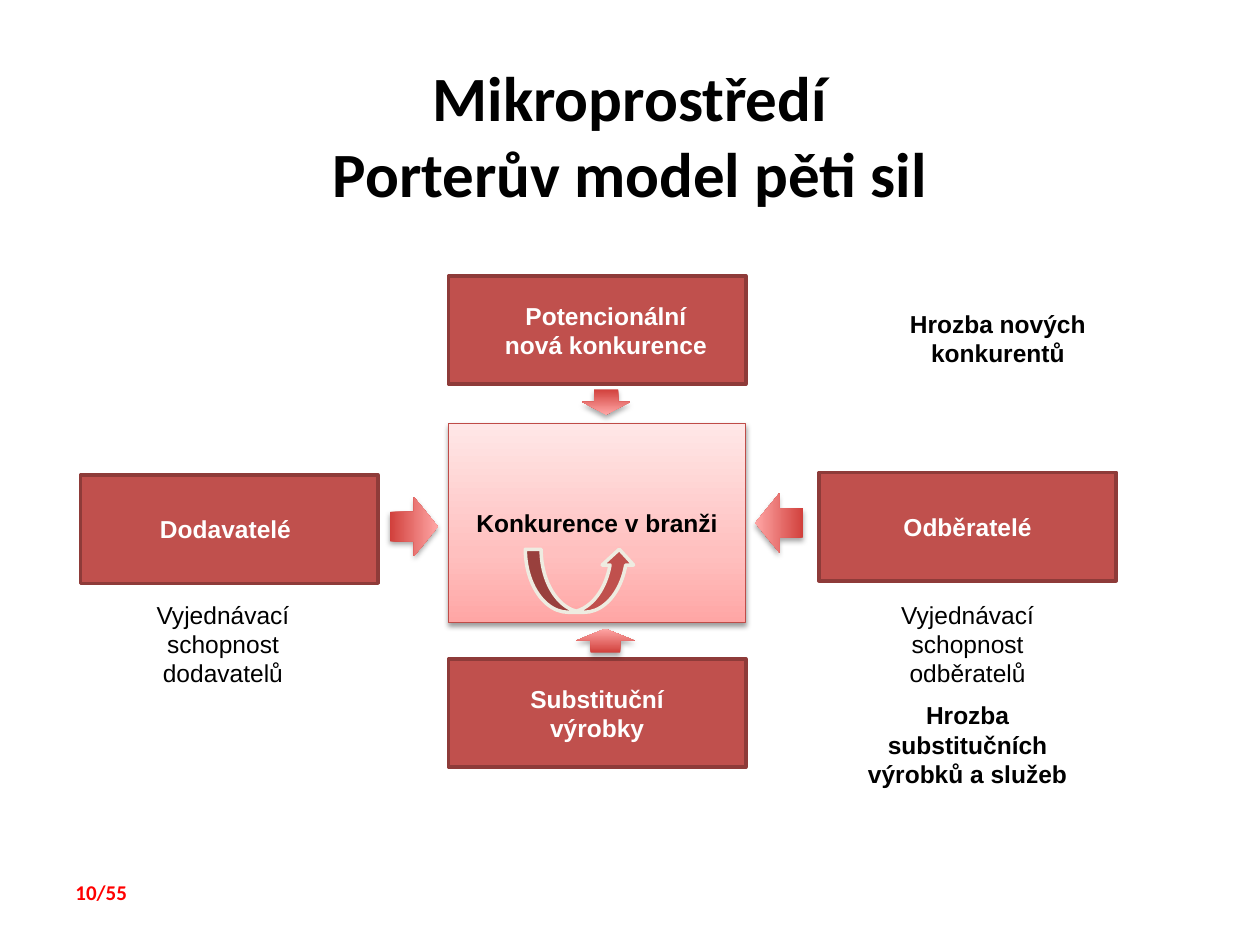
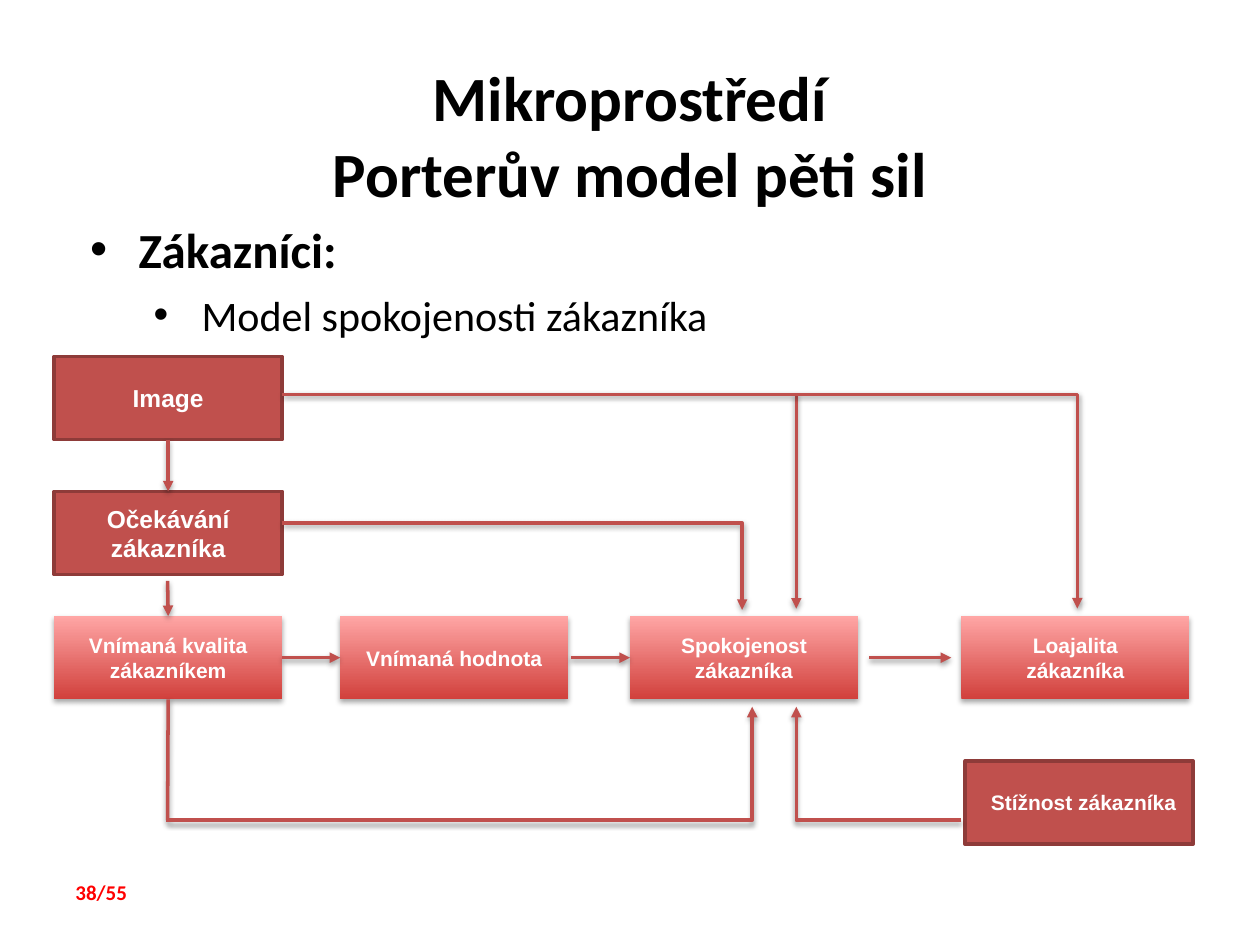
from copy import deepcopy

from pptx import Presentation
from pptx.dml.color import RGBColor
from pptx.enum.shapes import MSO_CONNECTOR, MSO_SHAPE
from pptx.enum.text import MSO_ANCHOR, MSO_AUTO_SIZE, PP_ALIGN
from pptx.oxml import parse_xml
from pptx.oxml.ns import nsdecls, qn
from pptx.util import Inches, Pt

CELL = Inches(0.1)
COLUMNS, ROWS = 100, 75
TITLE_AND_CONTENT, TITLE_ONLY = 1, 5
RECTANGLE, UP_ARROW = MSO_SHAPE.RECTANGLE, MSO_SHAPE.UP_ARROW
CURVED_ARROW = MSO_SHAPE.CURVED_UP_ARROW
STRAIGHT, ELBOW = MSO_CONNECTOR.STRAIGHT, MSO_CONNECTOR.ELBOW
LEFT, CENTER = PP_ALIGN.LEFT, PP_ALIGN.CENTER
TOP, MIDDLE = MSO_ANCHOR.TOP, MSO_ANCHOR.MIDDLE
SIDE_TOP, SIDE_LEFT, SIDE_BOTTOM, SIDE_RIGHT = range(4)

BLACK, WHITE, RED = "000000", "FFFFFF", "FF0000"
BRICK, BRICK_EDGE, CREAM = "C0504D", "8E3B39", "EEECE1"
PINK_EDGE = "BF4C48"
STRONG_GRADIENT = [(0, "D1403C"), (100, "FFA6A5")]
PALE_GRADIENT = [(0, "FFA6A5"), (35, "FFC0BF"), (100, "FFE7E7")]
TITLE = "Mikroprostředí\vPorterův model pěti sil"


def color(value):
    """Turn a hex string into a colour."""
    return RGBColor.from_string(value)


def place(*lengths):
    """Turn grid lengths into slide lengths."""
    return [round(length * CELL) for length in lengths]


def write(shape, text, size=14, font="Arial", fill=BLACK, bold=True,
          align=CENTER, anchor=TOP, insets=(1, 1)):
    """Write text into a shape, one paragraph for each line."""
    frame = shape.text_frame
    frame.text = text
    frame.word_wrap = True
    frame.auto_size = MSO_AUTO_SIZE.NONE
    frame.vertical_anchor = anchor
    frame.margin_left, frame.margin_right = place(*insets)
    frame.margin_top = frame.margin_bottom = Inches(0.05)
    for paragraph in frame.paragraphs:
        paragraph.alignment = align
        for run in paragraph.runs:
            run.font.size, run.font.name, run.font.bold = Pt(size), font, bold
            run.font.color.rgb = color(fill)
        for line_break in paragraph._p.findall(qn("a:br")):
            line_break.append(deepcopy(paragraph.runs[0]._r.rPr))


def add_text(slide, box, text, **text_format):
    """Add a text box on the grid."""
    write(slide.shapes.add_textbox(*place(*box)), text, **text_format)


def cast_shadow(properties, opacity, distance):
    """Give shape properties a soft shadow that falls downwards."""
    properties.append(parse_xml(
        f'<a:effectLst {nsdecls("a")}><a:outerShdw blurRad="{Pt(3.1)}" '
        f'dist="{Pt(distance)}" dir="5400000" rotWithShape="0">'
        f'<a:srgbClr val="{BLACK}"><a:alpha val="{opacity * 1000}"/></a:srgbClr>'
        '</a:outerShdw></a:effectLst>'))


def fill_gradient(shape, stops):
    """Fill a shape with colour stops that run from bottom to top."""
    shape.fill.gradient()
    marks = "".join(f'<a:gs pos="{share * 1000}"><a:srgbClr val="{value}"/></a:gs>'
                    for share, value in stops)
    properties = shape._element.spPr
    properties.replace(properties.find(qn("a:gradFill")), parse_xml(
        f'<a:gradFill {nsdecls("a")} rotWithShape="1"><a:gsLst>{marks}</a:gsLst>'
        '<a:lin ang="16200000" scaled="0"/></a:gradFill>'))


def add_solid(slide, box, kind=RECTANGLE, edge=BRICK_EDGE):
    """Add an outlined brick-coloured shape."""
    shape = slide.shapes.add_shape(kind, *place(*box))
    shape.fill.solid()
    shape.fill.fore_color.rgb = color(BRICK)
    shape.line.color.rgb = color(edge)
    shape.line.width = Pt(2)
    shape.shadow.inherit = False
    return shape


def add_glossy(slide, box, kind=RECTANGLE, stops=STRONG_GRADIENT, edge=None,
               rotation=0, shadow=(35, 1.8)):
    """Add a shape with a gradient and a shadow."""
    shape = slide.shapes.add_shape(kind, *place(*box))
    fill_gradient(shape, stops)
    if edge:
        shape.line.color.rgb = color(edge)
        shape.line.width = Pt(0.75)
    else:
        shape.line.fill.background()
    cast_shadow(shape._element.spPr, *shadow)
    shape.rotation = rotation
    return shape


def add_link(slide, start, end, kind=STRAIGHT, begin=None, finish=None, head=True):
    """Add a line between grid points, joined to (shape, side) pairs if given."""
    link = slide.shapes.add_connector(kind, *place(*start, *end))
    if begin:
        link.begin_connect(*begin)
    if finish:
        link.end_connect(*finish)
    link.line.color.rgb = color(BRICK)
    link.line.width = Pt(2)
    properties = link._element.spPr
    if head:
        link.line._get_or_add_ln().append(
            parse_xml(f'<a:tailEnd {nsdecls("a")} type="triangle"/>'))
    if kind == ELBOW:
        guides = properties.find(qn("a:prstGeom")).get_or_add_avLst()
        guides.append(parse_xml(
            f'<a:gd {nsdecls("a")} name="adj1" fmla="val 100000"/>'))
    cast_shadow(properties, 38, 1.6)


def start_slide(presentation, layout, number):
    """Add a slide with the shared title and its page number."""
    slide = presentation.slides.add_slide(presentation.slide_layouts[layout])
    title = slide.shapes.title
    title.left, title.top, title.width, title.height = place(5, 4.4, 90, 12.5)
    write(title, TITLE, size=36, font="Calibri", anchor=MIDDLE)
    add_text(slide, (5, 69.3, 9.2, 3), f"{number}/55", size=12, font="Calibri",
             fill=RED, align=LEFT)
    return slide


def write_bullets(slide, items):
    """Fill the body placeholder with (text, size, bold) bullets, one per level."""
    body = slide.placeholders[1]
    body.left, body.top, body.width, body.height = place(5, 16.9, 90, 46.8)
    write(body, "\n".join(text for text, _, _ in items), font="Calibri", align=LEFT)
    for level, (paragraph, item) in enumerate(zip(body.text_frame.paragraphs, items)):
        paragraph.level = level
        paragraph.space_before = Pt(6.4 if level else 0)
        properties = paragraph._p.get_or_add_pPr()
        properties.set("marL", str(Inches(0.5 * (level + 1))))
        properties.set("indent", str(-Inches(0.38)))
        properties.append(parse_xml(f'<a:buFont {nsdecls("a")} typeface="Arial"/>'))
        properties.append(parse_xml(f'<a:buChar {nsdecls("a")} char="•"/>'))
        for run in paragraph.runs:
            run.font.size, run.font.bold = Pt(item[1]), item[2]


def build_five_forces(presentation):
    """Build the diagram of the five forces."""
    slide = start_slide(presentation, TITLE_ONLY, 10)
    width, height, middle = 23.6, 8.6, 35.6
    forces = [
        ("Potencionální nová konkurence", middle, 21.9, (3.9, 2.5)),
        ("Dodavatelé", 6.4, 37.7, (2, 2.6)),
        ("Substituční výrobky", middle, 52.3, (3.2, 3.2)),
        ("Odběratelé", 65, 37.5, (3.3, 3.3)),
    ]
    for text, left, top, insets in forces:
        write(add_solid(slide, (left, top, width, height)), text, fill=WHITE,
              anchor=MIDDLE, insets=insets)
    rivalry = add_glossy(slide, (middle, 33.6, width, 15.8), stops=PALE_GRADIENT,
                         edge=PINK_EDGE, shadow=(38, 1.6))
    write(rivalry, "Konkurence v branži", anchor=MIDDLE)

    captions = [
        ("Hrozba nových konkurentů", 69.7, 24, True),
        ("Hrozba substitučních výrobků a služeb", 67.3, 55.1, True),
        ("Vyjednávací schopnost odběratelů", 67.3, 47.1, False),
        ("Vyjednávací schopnost dodavatelů", 8.2, 47.1, False),
    ]
    for text, left, top, bold in captions:
        add_text(slide, (left, top, 19, 8.1), text, bold=bold)

    arrows = [((45.7, 49.9, 4.7, 1.9), 0), ((59.5, 39.6, 4.7, 3.8), 270),
              ((30.5, 39.9, 4.7, 3.8), 90), ((46.2, 30.9, 3.8, 2), 180)]
    for box, rotation in arrows:
        add_glossy(slide, box, kind=UP_ARROW, rotation=rotation)
    add_solid(slide, (41.7, 43.6, 8.7, 5), kind=CURVED_ARROW, edge=CREAM)


def build_satisfaction_model(presentation):
    """Build the flow chart of customer satisfaction."""
    slide = start_slide(presentation, TITLE_AND_CONTENT, 38)
    write_bullets(slide, [("Zákazníci:", 28, True),
                          ("Model spokojenosti zákazníka", 24, False)])
    nodes = [
        ("Image", add_solid, 4.3, 28.3, 14, 1),
        ("Očekávání zákazníka", add_solid, 4.3, 39, 14, 1),
        ("Vnímaná kvalita zákazníkem", add_glossy, 4.3, 48.9, 12, 1),
        ("Vnímaná hodnota", add_glossy, 27, 48.9, 12, 1),
        ("Spokojenost zákazníka", add_glossy, 50, 48.9, 12, 1),
        ("Loajalita\nzákazníka", add_glossy, 76.3, 48.9, 12, 1),
        ("Stížnost zákazníka", add_solid, 76.6, 60.4, 12, 1.7),
    ]
    shapes = []
    for text, add_node, left, top, size, left_inset in nodes:
        shape = add_node(slide, (left, top, 18.1, 6.6))
        write(shape, text, size=size, fill=WHITE, anchor=MIDDLE,
              insets=(left_inset, 1))
        shapes.append(shape)
    image, expectation, quality, value, satisfaction = shapes[:5]

    add_link(slide, (13.3, 34.9), (13.3, 39), begin=(image, SIDE_BOTTOM),
             finish=(expectation, SIDE_TOP))
    add_link(slide, (13.3, 46.1), (13.3, 48.9), finish=(quality, SIDE_TOP))
    add_link(slide, (22.4, 52.2), (27, 52.2), begin=(quality, SIDE_RIGHT),
             finish=(value, SIDE_LEFT))
    add_link(slide, (45.3, 52.2), (50, 52.2), finish=(satisfaction, SIDE_LEFT))
    add_link(slide, (69, 52.2), (75.5, 52.2))
    add_link(slide, (63.2, 31.3), (63.2, 48.3))
    add_link(slide, (13.3, 55.5), (13.3, 65.1), begin=(quality, SIDE_BOTTOM),
             head=False)
    bends = [((22.4, 31.3), (85.5, 48.3)), ((22.4, 41.5), (58.9, 48.4)),
             ((13.2, 65.1), (59.7, 56.1)), ((76.3, 65.1), (63.2, 56.1))]
    for start, end in bends:
        add_link(slide, start, end, kind=ELBOW)


def main():
    """Build and save the presentation."""
    presentation = Presentation()
    presentation.slide_width, presentation.slide_height = place(COLUMNS, ROWS)
    build_five_forces(presentation)
    build_satisfaction_model(presentation)
    presentation.save("out.pptx")


if __name__ == "__main__":
    main()
